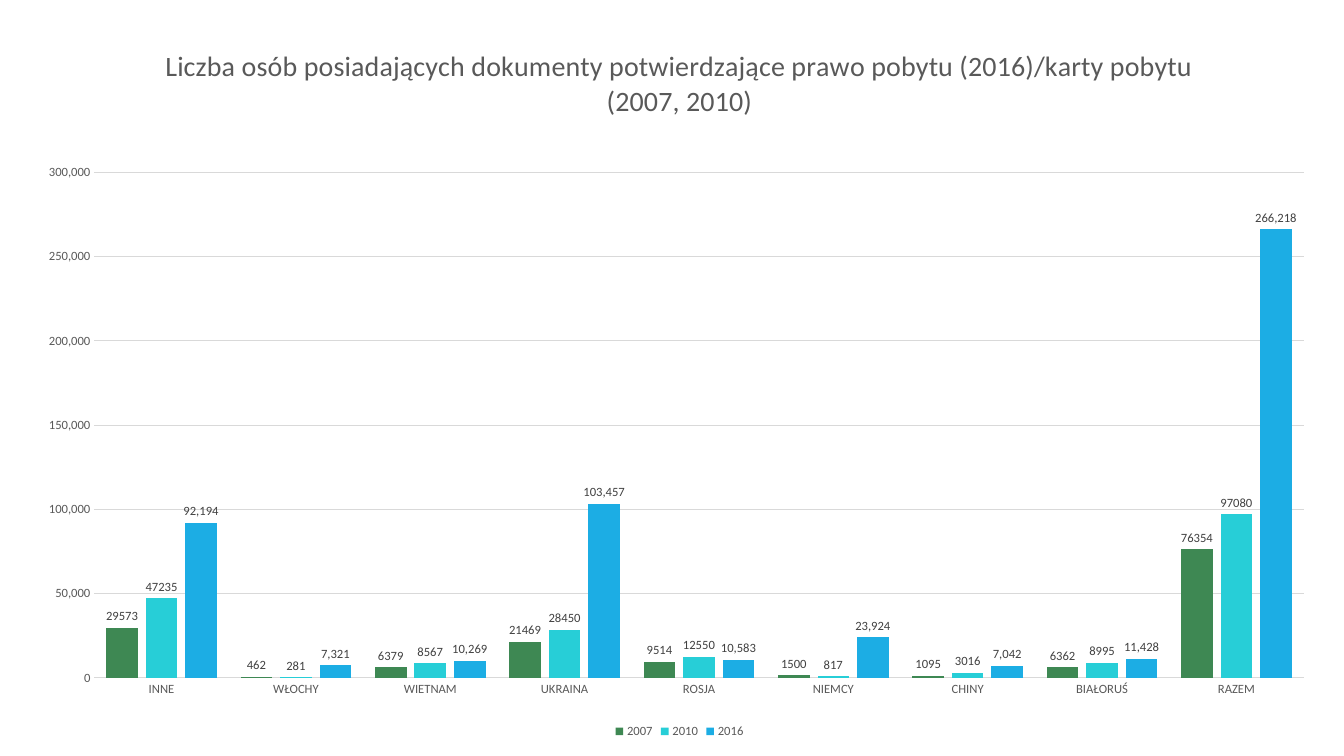
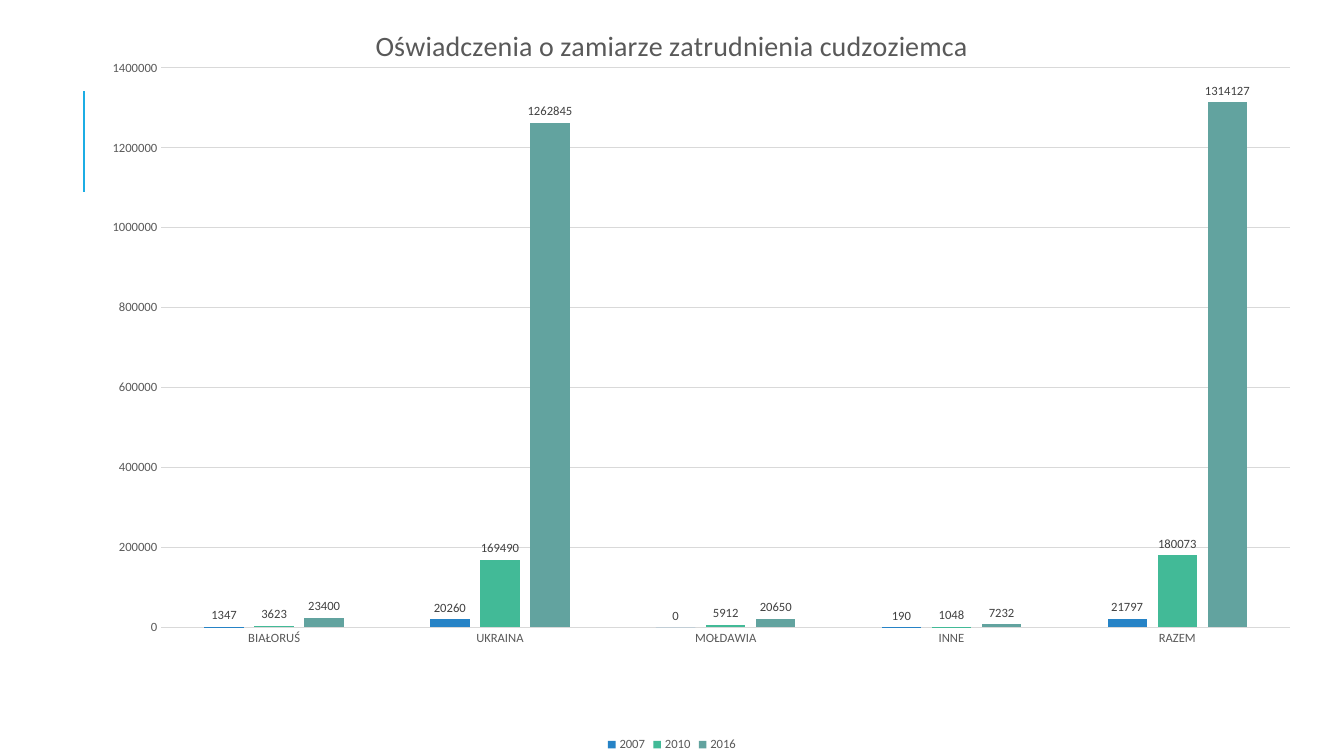
"""Builds two clustered column chart slides about foreigners in Poland."""
from dataclasses import dataclass

from lxml.etree import SubElement
from pptx import Presentation
from pptx.chart.chart import Chart
from pptx.chart.data import CategoryChartData
from pptx.chart.series import BarSeries
from pptx.dml.color import RGBColor
from pptx.enum.chart import XL_CHART_TYPE as ChartType
from pptx.enum.chart import XL_LABEL_POSITION as LabelPos
from pptx.enum.chart import XL_LEGEND_POSITION as LegendPos
from pptx.enum.chart import XL_TICK_MARK as TickMark
from pptx.enum.shapes import MSO_CONNECTOR as Connector
from pptx.oxml import parse_xml
from pptx.oxml.ns import nsdecls, qn
from pptx.slide import Slide
from pptx.text.text import Font
from pptx.util import Cm, Pt


@dataclass(frozen=True)
class Theme:
    font: str = "Calibri"
    text: str = "595959"
    label: str = "404040"
    grid: str = "D9D9D9"
    accent: str = "1CADE4"
    base: str = "000000"
    title_size: float = 20
    base_size: float = 10
    small_size: float = 9
    grid_width: float = 0.75
    accent_width: float = 1.5


@dataclass(frozen=True)
class Box:
    x: float
    y: float
    w: float
    h: float


@dataclass(frozen=True)
class Series:
    name: str
    values: tuple[int, ...]
    color: str
    fmt: str = "General"


@dataclass(frozen=True)
class ChartSlide:
    title: str
    box: Box
    plot: Box
    categories: tuple[str, ...]
    series: tuple[Series, ...]
    gap: int
    overlap: int
    axis_fmt: str = "General"
    accent_line: bool = False


THEME = Theme()
WIDTH, HEIGHT = 33.87, 19.05
THOUSANDS = "#,##0"

SLIDES = (
    ChartSlide(
        title="Liczba osób posiadających dokumenty potwierdzające prawo pobytu "
              "(2016)/karty pobytu (2007, 2010)",
        box=Box(0.74, 0.53, 32.77, 18.19),
        plot=Box(0.05, 0.21, 0.93, 0.7),
        categories=("INNE", "WŁOCHY", "WIETNAM", "UKRAINA", "ROSJA", "NIEMCY",
                    "CHINY", "BIAŁORUŚ", "RAZEM"),
        series=(
            Series("2007", (29573, 462, 6379, 21469, 9514, 1500, 1095, 6362, 76354),
                   "3E8853"),
            Series("2010", (47235, 281, 8567, 28450, 12550, 817, 3016, 8995, 97080),
                   "27CED7"),
            Series("2016", (92194, 7321, 10269, 103457, 10583, 23924, 7042, 11428, 266218),
                   "1CADE4", THOUSANDS),
        ),
        gap=75,
        overlap=-25,
        axis_fmt=THOUSANDS,
    ),
    ChartSlide(
        title="Oświadczenia o zamiarze zatrudnienia cudzoziemca",
        box=Box(0, 0, WIDTH, HEIGHT),
        plot=Box(0.12, 0.09, 0.84, 0.74),
        categories=("BIAŁORUŚ", "UKRAINA", "MOŁDAWIA", "INNE", "RAZEM"),
        series=(
            Series("2007", (1347, 20260, 0, 190, 21797), "2683C6"),
            Series("2010", (3623, 169490, 5912, 1048, 180073), "42BA97"),
            Series("2016", (23400, 1262845, 20650, 7232, 1314127), "62A39F"),
        ),
        gap=219,
        overlap=-27,
        accent_line=True,
    ),
)


def set_font(font: Font, size: float, color: str) -> None:
    """Apply the theme typeface with a size and colour."""
    font.name = THEME.font
    font.size = Pt(size)
    font.bold = False
    font.color.rgb = RGBColor.from_string(color)


def set_plot(chart: Chart, plot: Box) -> None:
    """Fix the inner plot area as fractions of the chart and clear its background."""
    space = chart.element
    space.find(qn("c:chart")).addnext(
        parse_xml(f"<c:spPr {nsdecls('c', 'a')}><a:noFill/><a:ln><a:noFill/></a:ln></c:spPr>"))
    area = space.find(".//" + qn("c:plotArea"))
    for old in area.findall(qn("c:layout")):
        area.remove(old)
    layout = parse_xml(f"<c:layout {nsdecls('c')}/>")
    area.insert(0, layout)
    manual = SubElement(layout, qn("c:manualLayout"))
    settings = (("layoutTarget", "inner"), ("xMode", "edge"), ("yMode", "edge"),
                ("x", plot.x), ("y", plot.y), ("w", plot.w), ("h", plot.h))
    for tag, value in settings:
        SubElement(manual, qn(f"c:{tag}")).set("val", str(value))


def style_title(chart: Chart, title: str) -> None:
    """Write the chart title."""
    chart.has_title = True
    chart.chart_title.include_in_layout = False
    r = chart.chart_title.text_frame.paragraphs[0].add_run()
    r.text = title
    set_font(r.font, THEME.title_size, THEME.text)


def style_axes(chart: Chart, fmt: str) -> None:
    """Format both axes, the gridlines and the legend."""
    cat, val = chart.category_axis, chart.value_axis
    for axis in (cat, val):
        axis.major_tick_mark = axis.minor_tick_mark = TickMark.NONE
        set_font(axis.tick_labels.font, THEME.small_size, THEME.text)
    val.has_major_gridlines = True
    for line in (cat.format.line, val.major_gridlines.format.line):
        line.color.rgb = RGBColor.from_string(THEME.grid)
        line.width = Pt(THEME.grid_width)
    val.format.line.fill.background()
    val.tick_labels.number_format = fmt
    val.tick_labels.number_format_is_linked = False
    chart.has_legend = True
    chart.legend.position = LegendPos.BOTTOM
    chart.legend.include_in_layout = False
    set_font(chart.legend.font, THEME.small_size, THEME.text)


def style_series(bars: BarSeries, series: Series) -> None:
    """Colour one series and label its columns."""
    bars.invert_if_negative = False
    bars.format.fill.solid()
    bars.format.fill.fore_color.rgb = RGBColor.from_string(series.color)
    labels = bars.data_labels
    labels.show_value = True
    labels.position = LabelPos.OUTSIDE_END
    labels.number_format = series.fmt
    labels.number_format_is_linked = False
    set_font(labels.font, THEME.small_size, THEME.label)


def add_column_chart(s: Slide, spec_: ChartSlide) -> None:
    """Add the clustered column chart of one slide."""
    data = CategoryChartData()
    data.categories = spec_.categories
    for series in spec_.series:
        data.add_series(series.name, series.values, series.fmt)
    b = spec_.box
    chart = s.shapes.add_chart(ChartType.COLUMN_CLUSTERED, Cm(b.x), Cm(b.y),
                               Cm(b.w), Cm(b.h), data).chart
    set_font(chart.font, THEME.base_size, THEME.base)
    set_plot(chart, spec_.plot)
    style_title(chart, spec_.title)
    style_axes(chart, spec_.axis_fmt)
    plot = chart.plots[0]
    plot.vary_by_categories = False
    plot.gap_width = spec_.gap
    plot.overlap = spec_.overlap
    for bars, series in zip(plot.series, spec_.series):
        style_series(bars, series)


def add_accent_line(s: Slide) -> None:
    """Add the short vertical accent line at the left."""
    sp = s.shapes.add_connector(Connector.STRAIGHT, Cm(2.11), Cm(4.83), Cm(2.11), Cm(2.29))
    sp.line.color.rgb = RGBColor.from_string(THEME.accent)
    sp.line.width = Pt(THEME.accent_width)
    SubElement(sp.element.spPr, qn("a:effectLst"))


def main() -> None:
    """Build and save the presentation."""
    prs = Presentation()
    prs.slide_width, prs.slide_height = Cm(WIDTH), Cm(HEIGHT)
    blank = prs.slide_layouts[6]
    for chart_slide in SLIDES:
        s = prs.slides.add_slide(blank)
        if chart_slide.accent_line:
            add_accent_line(s)
        add_column_chart(s, chart_slide)
    prs.save("out.pptx")


if __name__ == "__main__":
    main()
